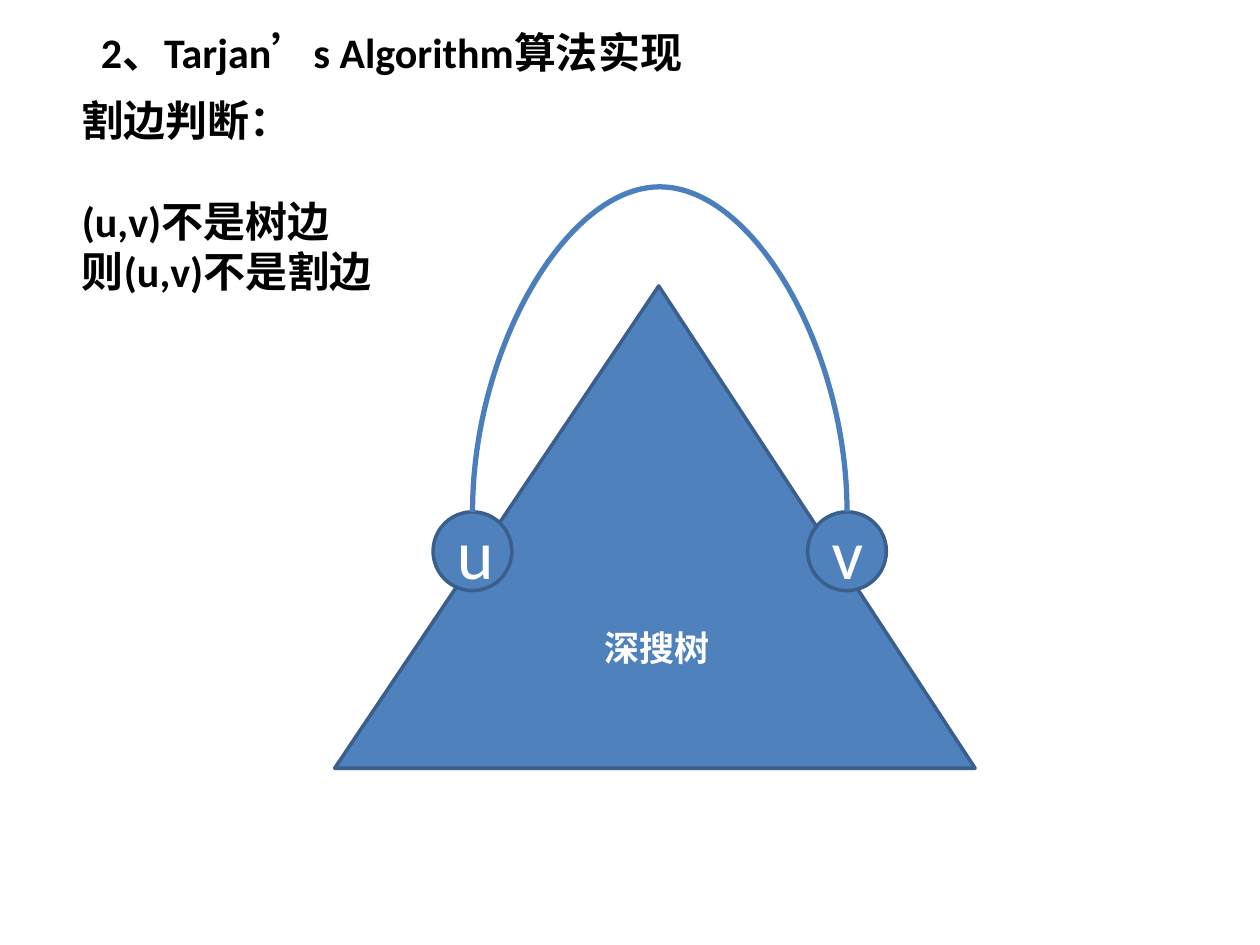
from pptx import Presentation
from pptx.dml.color import RGBColor
from pptx.enum import lang, shapes, text
from pptx.oxml.ns import qn
from pptx.util import Pt
from lxml import etree

BLACK = RGBColor(0x00, 0x00, 0x00)
WHITE = RGBColor(0xFF, 0xFF, 0xFF)
BLUE = RGBColor(0x4F, 0x81, 0xBD)
OUTLINE = RGBColor(0x3A, 0x5F, 0x8C)
ARC = RGBColor(0x4B, 0x7E, 0xBC)

# Content: lengths in points
HEADING = "2、Tarjan’s Algorithm算法实现"
BRIDGE_TEST = [("割边判断：", 0), ("(u,v)不是树边", 28.8), ("则(u,v)不是割边", 0)]
TREE_LABEL = "深搜树"
NODES = [("u", 247.5), ("v", 461.5)]  # name, left
NODE_TOP, NODE_SIZE = 292.5, 45
ARC_RISE, ARC_DEPTH = 196.6, 0.12


def write(shape, paragraphs, size=24, color=BLACK, bold=True,
          align=text.PP_ALIGN.LEFT, anchor=text.MSO_ANCHOR.TOP, grow=False):
    """Fill a shape with (text, space before) paragraphs."""
    frame = shape.text_frame
    frame.word_wrap = True
    frame.vertical_anchor = anchor
    frame.auto_size = (text.MSO_AUTO_SIZE.SHAPE_TO_FIT_TEXT if grow
                       else text.MSO_AUTO_SIZE.NONE)
    for i, (words, gap) in enumerate(paragraphs):
        para = frame.add_paragraph() if i else frame.paragraphs[0]
        para.alignment = align
        para.space_before = Pt(gap)
        props = para._p.get_or_add_pPr()
        props.set("marL", "0")
        props.set("indent", "0")
        etree.SubElement(props, qn("a:buNone"))
        run = para.add_run()
        run.text = words
        font = run.font
        font.name, font.size, font.bold = "Calibri", Pt(size), bold
        font.color.rgb = color
        font.language_id = lang.MSO_LANGUAGE_ID.SIMPLIFIED_CHINESE


def place(shape, left, top, width, height):
    shape.left, shape.top = Pt(left), Pt(top)
    shape.width, shape.height = Pt(width), Pt(height)


def add_figure(kind, left, top, width, height):
    figure = slide.shapes.add_shape(kind, Pt(left), Pt(top), Pt(width), Pt(height))
    figure.shadow.inherit = False
    figure.fill.solid()
    figure.fill.fore_color.rgb = BLUE
    figure.line.color.rgb = OUTLINE
    figure.line.width = Pt(2)
    return figure


prs = Presentation()
prs.slide_width, prs.slide_height = Pt(720), Pt(540)
slide = prs.slides.add_slide(prs.slide_layouts[1])

# Heading and bridge test
heading, bridge_test = slide.placeholders
place(heading, 50.4, 11.5, 512, 36)
write(heading, [(HEADING, 0)], grow=True)
place(bridge_test, 39.6, 50.4, 247.7, 123.8)
write(bridge_test, BRIDGE_TEST, grow=True)

# Search tree with its two nodes
centred = dict(color=WHITE, align=text.PP_ALIGN.CENTER, anchor=text.MSO_ANCHOR.MIDDLE)
tree = add_figure(shapes.MSO_SHAPE.ISOSCELES_TRIANGLE, 191.25, 163.4, 366, 275.6)
tree.adjustments[0] = 0.506
write(tree, [(TREE_LABEL, 0)], size=20, **centred)

nodes = []
for name, left in NODES:
    node = add_figure(shapes.MSO_SHAPE.OVAL, left, NODE_TOP, NODE_SIZE, NODE_SIZE)
    write(node, [(name, 0)], size=40, bold=False, **centred)
    nodes.append(node)

# Non-tree edge: a quarter-turned curve arching over the tree
u_x, v_x = (left + NODE_SIZE / 2 for _, left in NODES)
edge = slide.shapes.add_connector(shapes.MSO_CONNECTOR.CURVE,
                                  Pt(u_x), Pt(NODE_TOP), Pt(v_x), Pt(NODE_TOP))
edge.begin_connect(nodes[0], 0)
edge.end_connect(nodes[1], 0)
span = v_x - u_x
place(edge, (u_x + v_x - ARC_DEPTH) / 2, NODE_TOP - span / 2, ARC_DEPTH, span)
edge.line.color.rgb = ARC
edge.line.width = Pt(3)
edge_props = edge._element.spPr
turn = edge_props.find(qn("a:xfrm"))
for key, value in (("rot", "5400000"), ("flipH", "1"), ("flipV", "1")):
    turn.set(key, value)
guides = edge_props.find(qn("a:prstGeom")).find(qn("a:avLst"))
bend = round(ARC_RISE / ARC_DEPTH * 100000)
etree.SubElement(guides, qn("a:gd"), name="adj1", fmla=f"val {bend}")
etree.SubElement(edge_props, qn("a:effectLst"))

prs.save("out.pptx")
